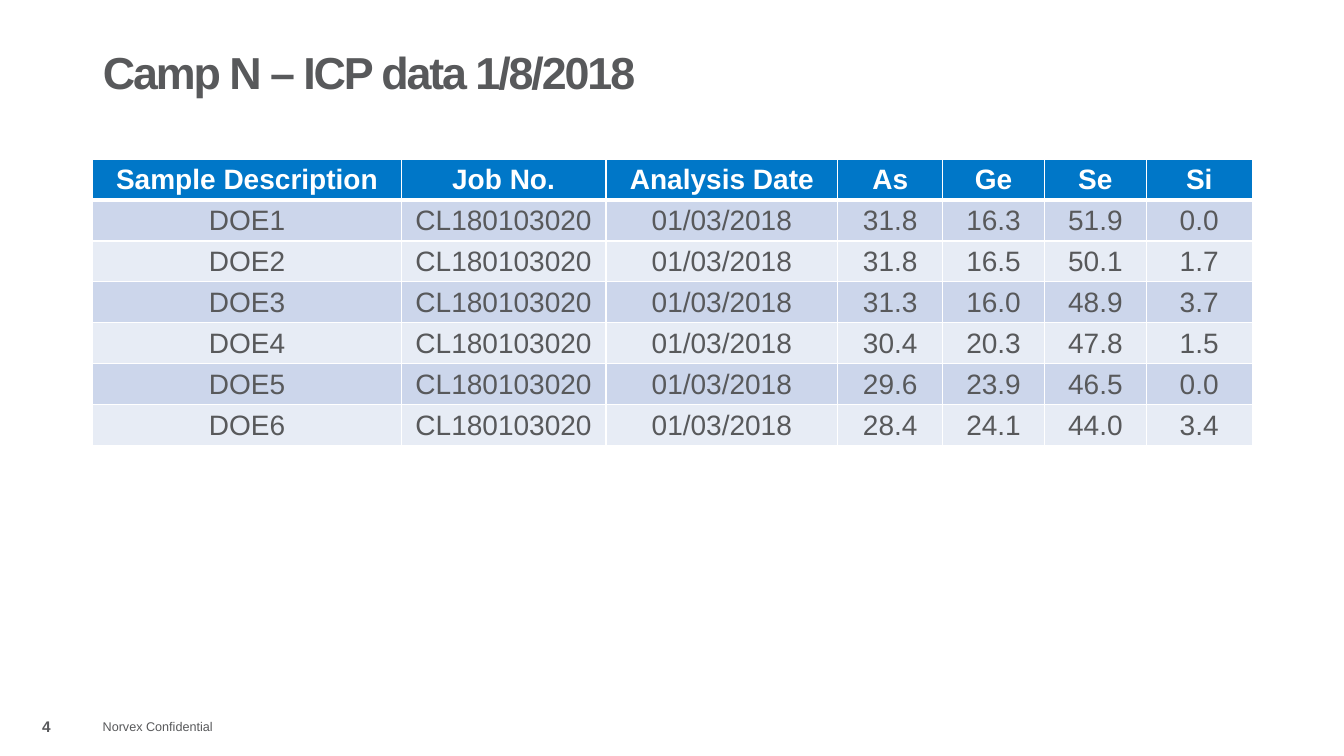
import pptx
import pptx.dml.color
import pptx.enum.text
import pptx.oxml
import pptx.oxml.ns
import pptx.util
from dataclasses import dataclass

PX = 9144  # 100 px to the inch
ANCHOR = pptx.enum.text.MSO_ANCHOR
ALIGN = pptx.enum.text.PP_ALIGN


@dataclass(frozen=True)
class Theme:
    font: str = "Arial"
    text: str = "58595B"
    white: str = "FFFFFF"
    header: str = "0077C8"
    bands: tuple = ("CCD6EB", "E7ECF5")
    title_size: int = 32
    table_size: int = 20
    number_size: int = 11
    footer_size: int = 9
    rule: int = 1
    header_rule: int = 3


THEME = Theme()
COLUMNS = {"Sample Description": 306, "Job No.": 203, "Analysis Date": 230,
           "As": 104, "Ge": 101, "Se": 101, "Si": 105}
JOB, DATE = "CL180103020", "01/03/2018"
COMPOSITIONS = [
    ("31.8", "16.3", "51.9", "0.0"),
    ("31.8", "16.5", "50.1", "1.7"),
    ("31.3", "16.0", "48.9", "3.7"),
    ("30.4", "20.3", "47.8", "1.5"),
    ("29.6", "23.9", "46.5", "0.0"),
    ("28.4", "24.1", "44.0", "3.4"),
]


def emu(*lengths):
    return [pptx.util.Emu(n * PX) for n in lengths]


def rgb(value):
    return pptx.dml.color.RGBColor.from_string(value)


def write(tf, text, size, color=THEME.text, bold=False, align=ALIGN.LEFT):
    p = tf.paragraphs[0]
    p.alignment = align
    r = p.add_run()
    r.text = text
    font = {"name": THEME.font, "size": pptx.util.Pt(size), "bold": bold}
    for name, value in font.items():
        setattr(r.font, name, value)
    r.font.color.rgb = rgb(color)
    return r


def set_borders(cell, top, bottom):
    """Rule the cell in white, with the top and bottom widths in points."""
    tcPr = cell._tc.get_or_add_tcPr()
    widths = {"lnL": THEME.rule, "lnR": THEME.rule, "lnT": top, "lnB": bottom}
    for i, (side, width) in enumerate(widths.items()):
        tcPr.insert(i, pptx.oxml.parse_xml(
            f'<a:{side} {pptx.oxml.ns.nsdecls("a")} w="{pptx.util.Pt(width)}">'
            f'<a:solidFill><a:srgbClr val="{THEME.white}"/></a:solidFill></a:{side}>'))


def add_title(s, box, text):
    sp = s.shapes.title
    sp.left, sp.top, sp.width, sp.height = emu(*box)
    tf = sp.text_frame
    tf.auto_size = pptx.enum.text.MSO_AUTO_SIZE.NONE
    tf.vertical_anchor = ANCHOR.MIDDLE
    r = write(tf, text, THEME.title_size, bold=True)
    tf.paragraphs[0].line_spacing = 0.9
    r._r.get_or_add_rPr().set("spc", "-150")


def add_footer(s, box, number_width, number, notice):
    """Place the page number at the left of the box and the notice after it."""
    left, top, width, height = box
    parts = [
        (left + number_width, width - number_width, notice,
         {"size": THEME.footer_size}),
        (left, number_width, number,
         {"size": THEME.number_size, "bold": True, "align": ALIGN.CENTER}),
    ]
    for x, w, text, style in parts:
        tf = s.shapes.add_textbox(*emu(x, top, w, height)).text_frame
        tf.word_wrap = True
        tf.vertical_anchor = ANCHOR.MIDDLE
        write(tf, text, **style)


def add_cell(cell, text, row):
    is_header = row == 0
    cell.fill.solid()
    cell.fill.fore_color.rgb = rgb(
        THEME.header if is_header else THEME.bands[(row - 1) % 2])
    set_borders(cell,
                top=THEME.header_rule if row == 1 else THEME.rule,
                bottom=THEME.header_rule if is_header else THEME.rule)
    margin, = emu(1)
    layout = {"margin_left": margin, "margin_right": margin, "margin_top": margin,
              "margin_bottom": 0, "vertical_anchor": ANCHOR.MIDDLE}
    for name, value in layout.items():
        setattr(cell, name, value)
    write(cell.text_frame, text, THEME.table_size,
          THEME.white if is_header else THEME.text, is_header, ALIGN.CENTER)


def add_icp_table(s, box):
    rows = [tuple(COLUMNS)]
    rows += [(f"DOE{n}", JOB, DATE, *values)
             for n, values in enumerate(COMPOSITIONS, 1)]
    table = s.shapes.add_table(len(rows), len(COLUMNS), *emu(*box)).table
    table.first_row = table.horz_banding = False
    for column, width in zip(table.columns, emu(*COLUMNS.values())):
        column.width = width
    for i, row in enumerate(rows):
        for j, text in enumerate(row):
            add_cell(table.cell(i, j), text, i)


def main():
    prs = pptx.Presentation()
    prs.slide_width, prs.slide_height = emu(1333, 750)
    s = prs.slides.add_slide(prs.slide_layouts[5])
    add_title(s, (92, 40, 1150, 69), "Camp N – ICP data 1/8/2018")
    add_footer(s, (0, 701, 244, 40), 92, "4", "Norvex Confidential")
    add_icp_table(s, (92, 158, 1150, 284))
    prs.save("out.pptx")


if __name__ == "__main__":
    main()
